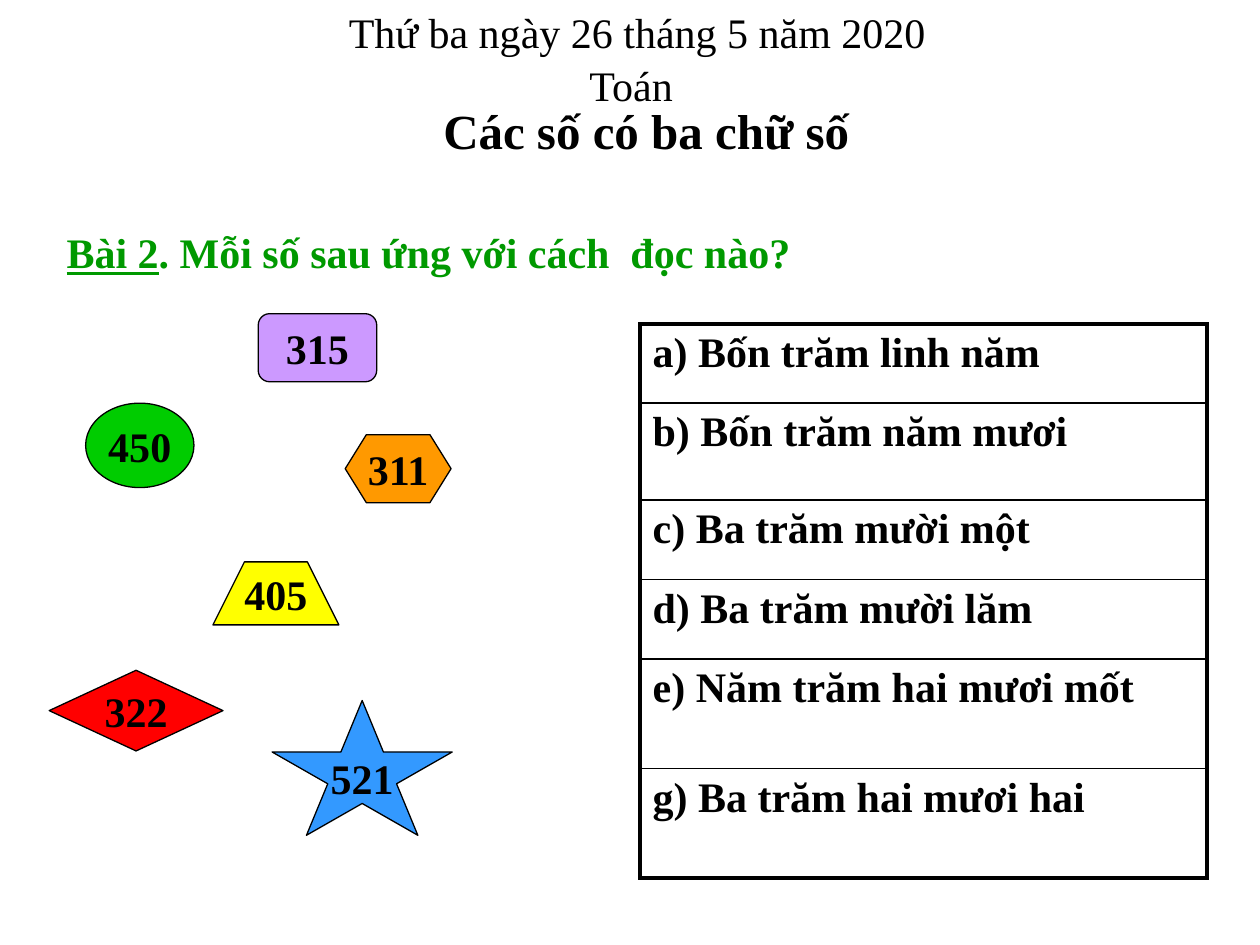
from lxml import etree
from pptx import Presentation
from pptx.dml.color import RGBColor as RGB
from pptx.enum.shapes import MSO_SHAPE as Kind
from pptx.enum.text import MSO_ANCHOR as Anchor, MSO_AUTO_SIZE as Fit, PP_ALIGN as Align
from pptx.oxml.ns import qn
from pptx.util import Inches, Pt

COLORS = {
    "black": "000000", "white": "FFFFFF", "title": "009900",
    "violet": "CC99FF", "green": "00CC00", "orange": "FF9900",
    "red": "FF0000", "blue": "3399FF", "yellow": "FFFF00",
}

# Number, preset, colour, place
SHAPES = [
    ("315", Kind.ROUNDED_RECTANGLE, "violet", (2.05, 2.49, 0.94, 0.54)),
    ("450", Kind.OVAL, "green", (0.68, 3.2, 0.86, 0.67)),
    ("311", Kind.FLOWCHART_PREPARATION, "orange", (2.74, 3.45, 0.84, 0.54)),
    ("322", Kind.FLOWCHART_DECISION, "red", (0.39, 5.32, 1.38, 0.64)),
    ("521", Kind.STAR_5_POINT, "blue", (2.16, 5.56, 1.43, 1.07)),
]

# Reading and row height
ROWS = [
    ("a) Bốn trăm linh năm", 0.63),
    ("b) Bốn trăm năm mươi", 0.77),
    ("c) Ba trăm mười một", 0.63),
    ("d) Ba trăm mười lăm", 0.63),
    ("e) Năm trăm hai mươi mốt", 0.87),
    ("g) Ba trăm hai mươi hai", 0.87),
]


def color(name):
    return RGB.from_string(COLORS[name])


def add_run(para, text, tint="black", **form):
    run = para.add_run()
    run.text = text
    base = {"name": "Times New Roman", "size": Pt(24), "bold": True}
    for key, value in (base | form).items():
        setattr(run.font, key, value)
    run.font.color.rgb = color(tint)


def add_box(slide, place, wrap=True):
    box = slide.shapes.add_textbox(*map(Inches, place))
    box.text_frame.word_wrap = wrap
    box.text_frame.auto_size = Fit.SHAPE_TO_FIT_TEXT
    return box


def add_line(slide, text, place, wrap=True, **form):
    box = add_box(slide, place, wrap)
    add_run(box.text_frame.paragraphs[0], text, **form)


def style_shape(shape, text, fill):
    shape.shadow.inherit = False
    shape.fill.solid()
    shape.fill.fore_color.rgb = color(fill)
    shape.line.color.rgb = color("black")
    shape.line.width = Pt(0.75)
    frame = shape.text_frame
    frame.word_wrap = False
    frame.vertical_anchor = Anchor.MIDDLE
    para = frame.paragraphs[0]
    para.alignment = Align.CENTER
    add_run(para, text)


def add_trapezoid(slide, text, fill):
    left, top, wide, high, inset = 1.69, 4.46, 1, 0.5, 0.25
    base = top + high
    path = slide.shapes.build_freeform(Inches(left), Inches(base))
    points = [(left + inset, top), (left + wide - inset, top), (left + wide, base)]
    path.add_line_segments([(Inches(x), Inches(y)) for x, y in points], close=True)
    style_shape(path.convert_to_shape(), text, fill)


def set_borders(cell, widths):
    props = cell._tc.get_or_add_tcPr()
    for i, (side, width) in enumerate(widths.items()):
        line = etree.Element(qn(f"a:ln{side}"), w=str(Pt(width)))
        fill = etree.SubElement(line, qn("a:solidFill"))
        etree.SubElement(fill, qn("a:srgbClr"), val=COLORS["black"])
        props.insert(i, line)


def add_readings(slide):
    place = (5.08, 2.57, 4.5, sum(high for _, high in ROWS))
    table = slide.shapes.add_table(len(ROWS), 1, *map(Inches, place)).table
    table.first_row = table.horz_banding = False
    last = len(ROWS) - 1
    for i, (text, high) in enumerate(ROWS):
        table.rows[i].height = Inches(high)
        cell = table.cell(i, 0)
        cell.fill.background()
        add_run(cell.text_frame.paragraphs[0], text)
        set_borders(cell, {"L": 2.25, "R": 2.25,
                           "T": 2.25 if i == 0 else 1,
                           "B": 2.25 if i == last else 1})


def main():
    deck = Presentation()
    deck.slide_width, deck.slide_height = Inches(10), Inches(7.5)
    slide = deck.slides.add_slide(deck.slide_layouts[6])

    # Exercise title
    task = add_box(slide, (0.43, 1.75, 6.14, 0.5))
    task.fill.solid()
    task.fill.fore_color.rgb = color("white")
    para = task.text_frame.paragraphs[0]
    add_run(para, "Bài 2", "title", underline=True)
    add_run(para, ". Mỗi số sau ứng với cách  đọc nào?", "title")

    # Readings
    add_readings(slide)

    # Numbers
    for text, kind, fill, place in SHAPES:
        shape = slide.shapes.add_shape(kind, *map(Inches, place))
        style_shape(shape, text, fill)
    add_trapezoid(slide, "405", "yellow")

    # Lesson heading
    add_line(slide, "Thứ ba ngày 26 tháng 5 năm 2020", (2.67, 0, 4.83, 0.5), bold=False)
    add_line(slide, "Toán", (4.58, 0.42, 0.87, 0.5), wrap=False, bold=False)
    add_line(slide, "Các số có ba chữ số", (3.42, 0.75, 3.5, 0.57), size=Pt(28))

    deck.save("out.pptx")


if __name__ == "__main__":
    main()
